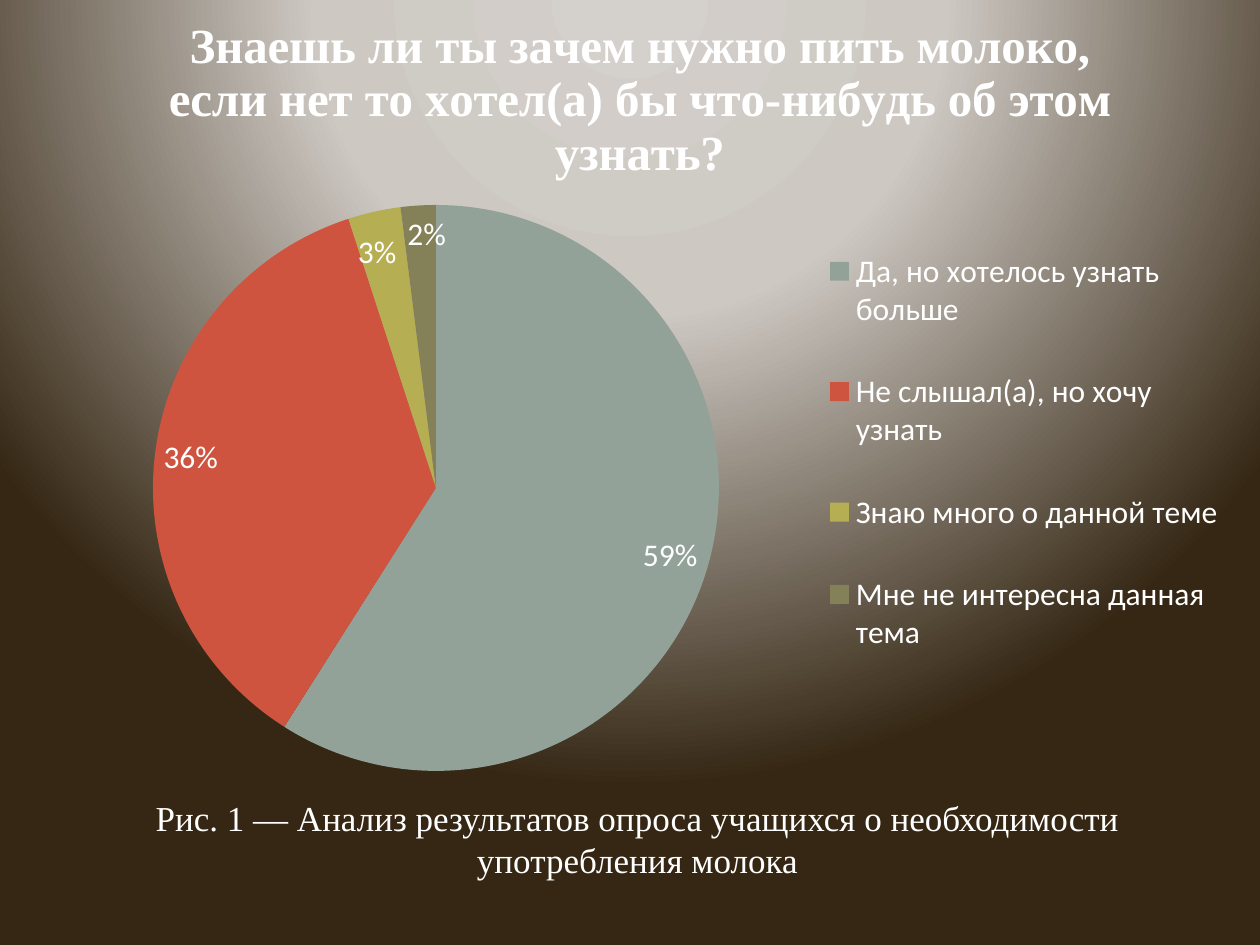
import lxml.etree
import pptx
import pptx.chart.data
import pptx.dml.color
import pptx.enum.chart
import pptx.enum.text
import pptx.oxml
import pptx.oxml.ns
import pptx.util

PX = 914400 / 126
SLIDE = (1260, 945)
QUESTION = ("Знаешь ли ты зачем нужно пить молоко, если нет то хотел(а) бы "
            "что-нибудь об этом узнать?")
CAPTION = ("Рис. 1 — Анализ результатов опроса учащихся о необходимости "
           "употребления молока")
# answer, share, fill, label shift from the inside end in px
ANSWERS = [
    ("Да, но хотелось узнать больше", 59, "93A299", (-3, 10)),
    ("Не слышал(а), но хочу узнать", 36, "CF543F", (1, -15)),
    ("Знаю много о данной теме", 3, "B5AE53", (-18, 14)),
    ("Мне не интересна данная тема", 2, "848058", (8, 2)),
]
BACKGROUND_STOPS = [(0, "D4D0CB"), (40, "CDC8C2"), (100, "352714")]
WHITE = "FFFFFF"
SERIF = "Times New Roman"

# left, top, width, height in px
CHART_BOX = (0, 0, 1275, 941)
TITLE_CORNER = (160, 5)
PIE_BOX = (153, 205, 566, 566)
LEGEND_BOX = (817, 208, 414, 488)
CAPTION_BOX = (47, 760, 1181, 127)
INSIDE_END = pptx.enum.chart.XL_LABEL_POSITION.INSIDE_END


def px(length):
    return pptx.util.Emu(round(length * PX))


def color(value):
    return pptx.dml.color.RGBColor.from_string(value)


def style(font, name, size, bold=False):
    font.name = name
    font.size = pptx.util.Pt(size)
    font.bold = bold
    font.color.rgb = color(WHITE)


def manual_layout(box, inner=False, edge=True):
    """Return a c:layout with fractions of the chart; without edge, a shift."""
    layout = lxml.etree.Element(pptx.oxml.ns.qn("c:layout"))
    manual = lxml.etree.SubElement(layout, pptx.oxml.ns.qn("c:manualLayout"))
    values = [("layoutTarget", "inner")] if inner else []
    if edge:
        values += [("xMode", "edge"), ("yMode", "edge")]
    values += [(key, f"{length / whole:.4f}") for key, length, whole
               in zip("xywh", box, CHART_BOX[2:] * 2)]
    for key, value in values:
        lxml.etree.SubElement(manual, pptx.oxml.ns.qn("c:" + key), val=value)
    return layout


def paint_background(page):
    page.background.fill.gradient()
    stops = "".join(
        f'<a:gs pos="{place * 1000}"><a:srgbClr val="{value}"/></a:gs>'
        for place, value in BACKGROUND_STOPS)
    gradient = pptx.oxml.parse_xml(
        f'<a:gradFill {pptx.oxml.ns.nsdecls("a")} rotWithShape="1">'
        f'<a:gsLst>{stops}</a:gsLst><a:path path="circle">'
        '<a:fillToRect l="50000" t="-80000" r="50000" b="180000"/>'
        '</a:path></a:gradFill>')
    old = page.element.xpath("p:cSld/p:bg/p:bgPr/a:gradFill")[0]
    old.getparent().replace(old, gradient)


def label_slices(chart):
    series = chart.plots[0].series[0]
    labels = series.data_labels
    labels.show_value = False
    labels.show_percentage = True
    labels.number_format = "0%"
    labels.number_format_is_linked = False
    labels.position = INSIDE_END
    style(labels.font, "Calibri", 18)
    for index in range(len(ANSWERS)):
        label = series.points[index].data_label
        style(label.font, "Calibri", 18)
        label.position = INSIDE_END
    for label, answer in zip(chart.element.xpath(".//c:dLbl"), ANSWERS):
        label.xpath("c:showVal")[0].set("val", "0")
        label.xpath("c:showPercent")[0].set("val", "1")
        label.xpath("c:idx")[0].addnext(manual_layout(answer[3], edge=False))
    for lines in chart.element.xpath(".//c:showLeaderLines"):
        lines.set("val", "0")


def place_chart_parts(chart):
    for old in chart.element.xpath(
            ".//c:title/c:layout | .//c:plotArea/c:layout | .//c:legend/c:layout"):
        old.getparent().remove(old)
    chart.element.xpath(".//c:title/c:tx")[0].addnext(manual_layout(TITLE_CORNER))
    chart.element.xpath(".//c:plotArea")[0].insert(
        0, manual_layout(PIE_BOX, inner=True))
    chart.element.xpath(".//c:legend/c:legendPos")[0].addnext(
        manual_layout(LEGEND_BOX))


def add_survey_chart(page):
    data = pptx.chart.data.CategoryChartData()
    data.categories = [answer[0] for answer in ANSWERS]
    data.add_series(QUESTION, [answer[1] for answer in ANSWERS])
    chart = page.shapes.add_chart(
        pptx.enum.chart.XL_CHART_TYPE.PIE, *map(px, CHART_BOX), data).chart
    style(chart.font, "Calibri", 18)

    chart.has_title = True
    span = chart.chart_title.text_frame.paragraphs[0].add_run()
    span.text = QUESTION
    style(span.font, SERIF, 28, bold=True)

    plot = chart.plots[0]
    plot.vary_by_categories = True
    for index, answer in enumerate(ANSWERS):
        slice_fill = plot.series[0].points[index].format.fill
        slice_fill.solid()
        slice_fill.fore_color.rgb = color(answer[2])
    label_slices(chart)

    chart.has_legend = True
    chart.legend.position = pptx.enum.chart.XL_LEGEND_POSITION.RIGHT
    chart.legend.include_in_layout = False
    style(chart.legend.font, "Calibri", 18)
    place_chart_parts(chart)


def add_caption(box):
    box.left, box.top, box.width, box.height = map(px, CAPTION_BOX)
    frame = box.text_frame
    frame.word_wrap = True
    frame.vertical_anchor = pptx.enum.text.MSO_ANCHOR.BOTTOM
    para = frame.paragraphs[0]
    para.alignment = pptx.enum.text.PP_ALIGN.CENTER
    para.space_before = pptx.util.Pt(0)
    span = para.add_run()
    span.text = CAPTION
    style(span.font, SERIF, 20)


def main():
    deck = pptx.Presentation()
    deck.slide_width, deck.slide_height = map(px, SLIDE)
    page = deck.slides.add_slide(deck.slide_layouts.get_by_name("Section Header"))
    title = page.shapes.title.element
    title.getparent().remove(title)
    paint_background(page)
    add_survey_chart(page)
    add_caption(page.placeholders[1])
    deck.save("out.pptx")


if __name__ == "__main__":
    main()
